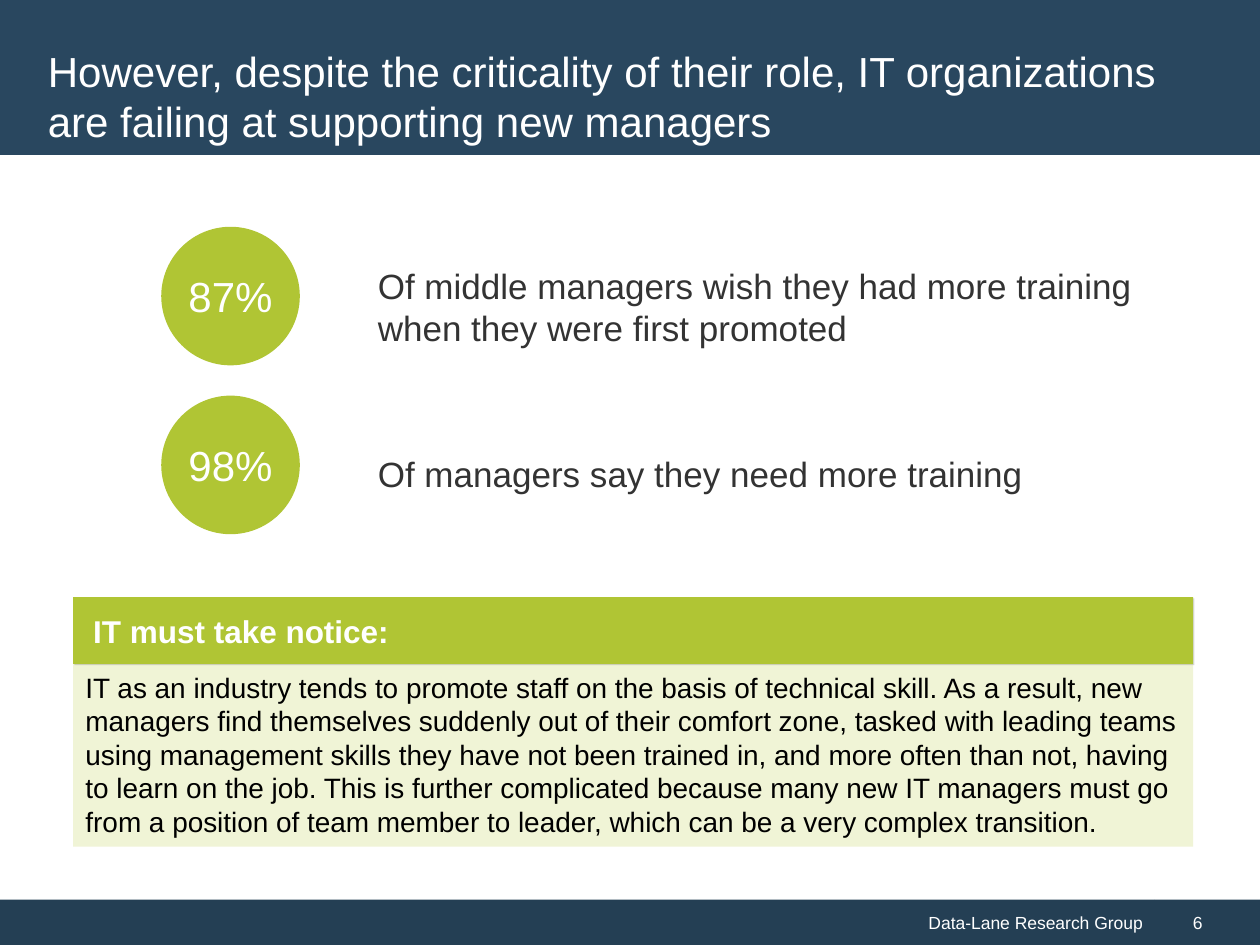
from lxml import etree
from pptx import Presentation
from pptx.dml.color import RGBColor
from pptx.enum.shapes import MSO_SHAPE
from pptx.enum.text import MSO_ANCHOR, MSO_AUTO_SIZE, PP_ALIGN
from pptx.oxml.ns import qn
from pptx.util import Inches, Pt

RECT, OVAL = MSO_SHAPE.RECTANGLE, MSO_SHAPE.OVAL
TOP, MIDDLE = MSO_ANCHOR.TOP, MSO_ANCHOR.MIDDLE
LEFT, CENTER, RIGHT = PP_ALIGN.LEFT, PP_ALIGN.CENTER, PP_ALIGN.RIGHT
FIXED = MSO_AUTO_SIZE.NONE
WIDTH, HEIGHT = Inches(10), Inches(7.5)
COL, ROW = WIDTH / 100, HEIGHT / 75
PAD = (1, 0.5, 1, 0.5)
COLORS = {
    "navy": "29475F", "dark": "243F54", "lime": "B0C534", "pale": "F0F4D6",
    "white": "FFFFFF", "gray": "333333", "black": "000000",
}


def color(name):
    """Return the named colour."""
    return RGBColor.from_string(COLORS[name])


def place(box):
    """Turn a box in columns and rows into slide lengths."""
    left, top, width, height = box
    return [round(n) for n in (left * COL, top * ROW, width * COL, height * ROW)]


def write(shape, text, size=16, tint="white", bold=False, align=LEFT,
          anchor=MIDDLE, pad=PAD, line=None, before=None):
    """Put formatted text in a shape."""
    frame = shape.text_frame
    frame.word_wrap, frame.auto_size, frame.vertical_anchor = True, FIXED, anchor
    left, top, right, bottom = pad
    frame.margin_left, frame.margin_right = round(left * COL), round(right * COL)
    frame.margin_top, frame.margin_bottom = round(top * ROW), round(bottom * ROW)
    para = frame.paragraphs[0]
    para.alignment = align
    if line:
        para.line_spacing = Pt(line)
    if before:
        para.space_before = Pt(before)
    run = para.add_run()
    run.text = text
    font = run.font
    font.name, font.size, font.bold = "Arial", Pt(size), bold
    font.color.rgb = color(tint)


def block(slide, box, fill, kind=RECT):
    """Add a plain filled shape."""
    shape = slide.shapes.add_shape(kind, *place(box))
    shape.shadow.inherit = False
    shape.fill.solid()
    shape.fill.fore_color.rgb = color(fill)
    shape.line.fill.background()
    return shape


def shade(shape):
    """Give a shape a faint, sharp drop shadow."""
    effects = shape._element.spPr.find(qn("a:effectLst"))
    outer = etree.SubElement(effects, qn("a:outerShdw"), blurRad="0",
                             dist=str(Pt(1)), dir=str(45 * 60000))
    tone = etree.SubElement(outer, qn("a:srgbClr"), val=COLORS["black"])
    etree.SubElement(tone, qn("a:alpha"), val="14000")


def header(slide, box, text):
    """Draw the title band with the title in front of it."""
    left, top, width, height = box
    block(slide, box, "navy")
    title = slide.shapes.title
    title.left, title.top, title.width, title.height = place(
        (left + 2.8, top + 2.8, width - 5.7, height - 2.7))
    slide.shapes._spTree.append(title._element)
    write(title, text, size=24)


def footer(slide, box, owner, page):
    """Draw the bottom band with owner and page number."""
    left, top, width, height = box
    split = width * 11 / 12
    name = block(slide, (left, top, split, height), "dark")
    write(name, owner, size=10, align=RIGHT)
    number = block(slide, (left + split, top, width - split, height), "dark")
    write(number, page, size=10, pad=(3, 0.5, 1, 0.5))


def stat(slide, box, value, text, drop):
    """Draw a figure in a disc with its statement beside it."""
    left, top, width, size = box
    disc = block(slide, (left, top, size, size), "lime", OVAL)
    write(disc, value, size=24, align=CENTER, pad=(0, 0, 0, 0))
    inset = size + 5.2
    label = slide.shapes.add_textbox(
        *place((left + inset, top + drop, width - inset, 4.6)))
    write(label, text, size=20, tint="gray", line=24, before=12)


def notice(slide, box, head, text):
    """Draw a panel with a heading bar above its body."""
    left, top, width, height = box
    bar = 5.3
    body = block(slide, (left, top + bar, width, height - bar), "pale")
    write(body, text, tint="black", anchor=TOP)
    strip = block(slide, (left, top, width, bar), "lime")
    shade(strip)
    write(strip, head, size=18, bold=True, pad=(1.6, 0.5, 1.6, 0.5))


def main():
    """Build and save the slide."""
    deck = Presentation()
    deck.slide_width, deck.slide_height = WIDTH, HEIGHT
    slide = deck.slides.add_slide(deck.slide_layouts[5])
    footer(slide, (0, 71.4, 100, 3.6), "Data-Lane Research Group", "6")
    header(slide, (0, 0, 100, 12.3),
           "However, despite the criticality of their role, IT organizations "
           "are failing at supporting new managers")
    stats = [
        ("87%", "Of middle managers wish they had more training when they "
                "were first promoted", 4),
        ("98%", "Of managers say they need more training", 3.9),
    ]
    for row, (value, text, drop) in enumerate(stats):
        stat(slide, (12.8, 18 + 13.4 * row, 83.1, 11), value, text, drop)
    notice(slide, (5.8, 47.4, 88.9, 19.8), "IT must take notice:",
           "IT as an industry tends to promote staff on the basis of technical "
           "skill. As a result, new managers find themselves suddenly out of "
           "their comfort zone, tasked with leading teams using management "
           "skills they have not been trained in, and more often than not, "
           "having to learn on the job. This is further complicated because "
           "many new IT managers must go from a position of team member to "
           "leader, which can be a very complex transition.")
    deck.save("out.pptx")


if __name__ == "__main__":
    main()
